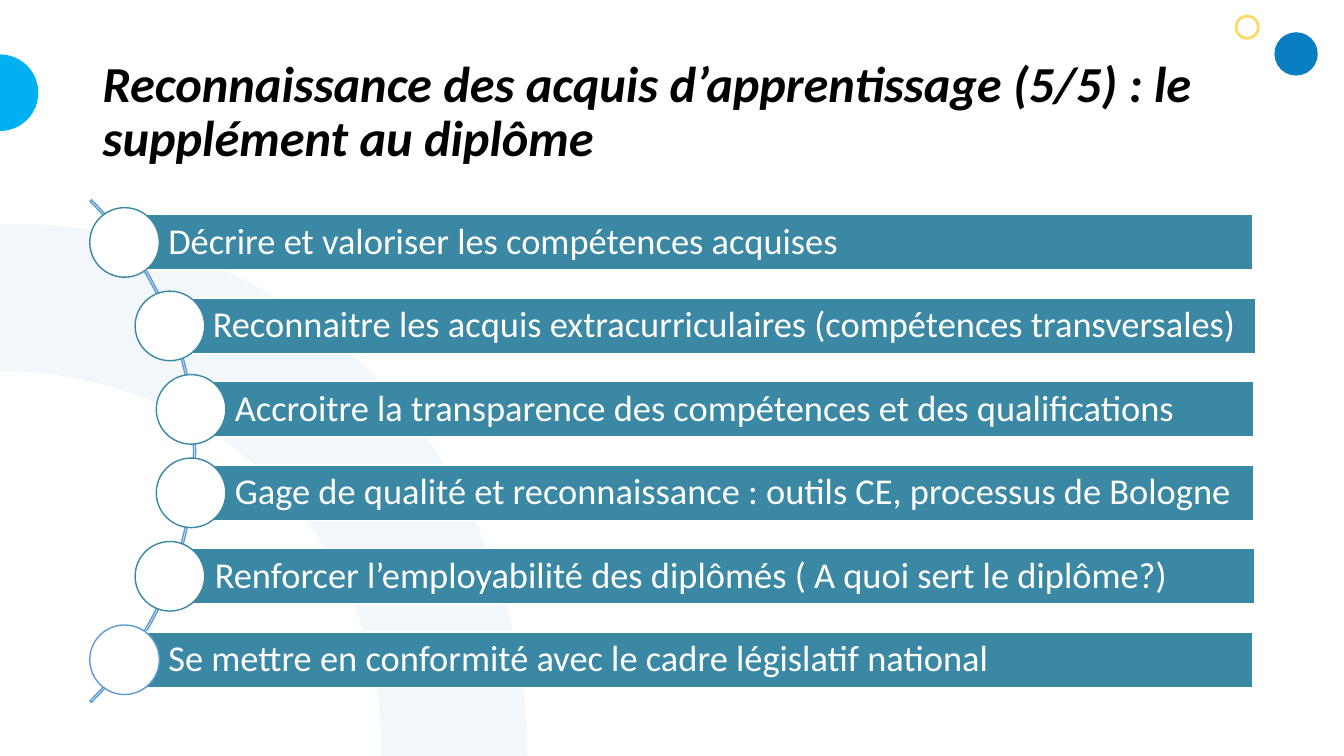
"""Build the slide on the diploma supplement."""
import lxml.etree
import pptx
import pptx.dml.color
import pptx.enum.shapes
import pptx.enum.text
import pptx.oxml.ns
import pptx.util

Inches = pptx.util.Inches
Kind = pptx.enum.shapes.MSO_SHAPE
COLORS = {
    "white": "FFFFFF", "black": "000000", "teal": "3A88A3", "blue": "5B9BD5",
    "deep": "097EC2", "sky": "00B0F0", "pale": "BDD7EE", "gold": "FFD966",
}
TOP, STEP, HEIGHT, DOT = 2.13, 0.828, 0.55, 0.69
ROWS = [
    ("Décrire et valoriser les compétences acquises", 0.89, 1.23, 11.2, "teal"),
    ("Reconnaitre les acquis extracurriculaires (compétences transversales)", 1.34, 1.67, 10.78, "teal"),
    ("Accroitre la transparence des compétences et des qualifications", 1.55, 1.89, 10.54, "teal"),
    ("Gage de qualité et reconnaissance : outils CE, processus de Bologne", 1.55, 1.89, 10.54, "teal"),
    ("Renforcer l’employabilité des diplômés ( A quoi sert le diplôme?)", 1.34, 1.69, 10.75, "teal"),
    ("Se mettre en conformité avec le cadre législatif national", 0.89, 1.23, 11.2, "blue"),
]


def color(name):
    return pptx.dml.color.RGBColor.from_string(COLORS[name])


def curve(start, pull, push, end, count=32):
    points = []
    for i in range(count + 1):
        t = i / count
        u = 1 - t
        points.append(tuple(
            Inches(u**3 * a + 3 * u * u * t * b + 3 * u * t * t * c + t**3 * d)
            for a, b, c, d in zip(start, pull, push, end)))
    return points


def write(shape, text, size=26, tint="white", inset=(0.1, 0.05, 0.1, 0.05), bold=False, slant=False):
    frame = shape.text_frame
    frame.word_wrap = True
    frame.vertical_anchor = pptx.enum.text.MSO_ANCHOR.MIDDLE
    frame.margin_left, frame.margin_top, frame.margin_right, frame.margin_bottom = map(Inches, inset)
    line = frame.paragraphs[0]
    line.alignment = pptx.enum.text.PP_ALIGN.LEFT
    line.line_spacing = 0.9
    run = line.add_run()
    run.text = text
    font = run.font
    font.name, font.size = "Calibri", pptx.util.Pt(size)
    font.bold, font.italic = bold, slant
    font.color.rgb = color(tint)


class Deck:
    def __init__(self):
        self.show = pptx.Presentation()
        self.show.slide_width, self.show.slide_height = Inches(13.33), Inches(7.5)
        self.slide = self.show.slides.add_slide(self.show.slide_layouts[6])

    def paint(self, shape, fill=None, line=None, width=1):
        shape.shadow.inherit = False
        if fill:
            shape.fill.solid()
            shape.fill.fore_color.rgb = color(fill)
        else:
            shape.fill.background()
        if line:
            shape.line.color.rgb = color(line)
            shape.line.width = pptx.util.Pt(width)
        else:
            shape.line.fill.background()
        return shape

    def shape(self, kind, box, **style):
        return self.paint(self.slide.shapes.add_shape(kind, *map(Inches, box)), **style)

    def disc(self, left, top, size, **style):
        return self.shape(Kind.OVAL, (left, top, size, size), **style)

    def band(self, points, fill, alpha):
        pen = self.slide.shapes.build_freeform(*points[0], scale=1.0)
        pen.add_line_segments(points[1:], close=True)
        shape = self.paint(pen.convert_to_shape(), fill=fill)
        tint = shape.fill._xPr.find(".//" + pptx.oxml.ns.qn("a:srgbClr"))
        lxml.etree.SubElement(tint, pptx.oxml.ns.qn("a:alpha"), val=str(alpha * 1000))

    def title(self, text, box):
        shape = self.slide.shapes.add_textbox(*map(Inches, box))
        write(shape, text, size=36, tint="black", bold=True, slant=True)

    def arc(self, left, top, size):
        shape = self.shape(Kind.BLOCK_ARC, (left, top, size, size), line="blue")
        for i, value in enumerate((189, 27, 0.003)):
            shape.adjustments[i] = value

    def row(self, top, text, dot, left, width, edge):
        bar = self.shape(Kind.RECTANGLE, (left, top, width, HEIGHT), fill="teal", line="white")
        write(bar, text, inset=(0.44, 0.07, 0.07, 0.07))
        self.disc(dot, top + (HEIGHT - DOT) / 2, DOT, fill="white", line=edge)


def main():
    deck = Deck()
    deck.disc(12.26, 0.16, 0.22, line="gold", width=2)
    deck.disc(12.64, 0.32, 0.43, fill="deep")
    outer = curve((0, 2.22), (2.87, 2.16), (5.22, 4.47), (5.23, 7.5))
    inner = curve((3.78, 7.5), (3.83, 5.4), (2.2, 3.69), (0, 3.68))
    deck.band(outer + inner, "pale", 20)
    deck.disc(-0.38, 0.54, 0.76, fill="sky")
    deck.title("Reconnaissance des acquis d’apprentissage (5/5) : le supplément au diplôme",
               (0.92, 0.4, 11.5, 1.45))
    deck.arc(-5.11, 0.95, 7.05)
    for i, row in enumerate(ROWS):
        deck.row(TOP + i * STEP, *row)
    deck.show.save("out.pptx")


if __name__ == "__main__":
    main()
